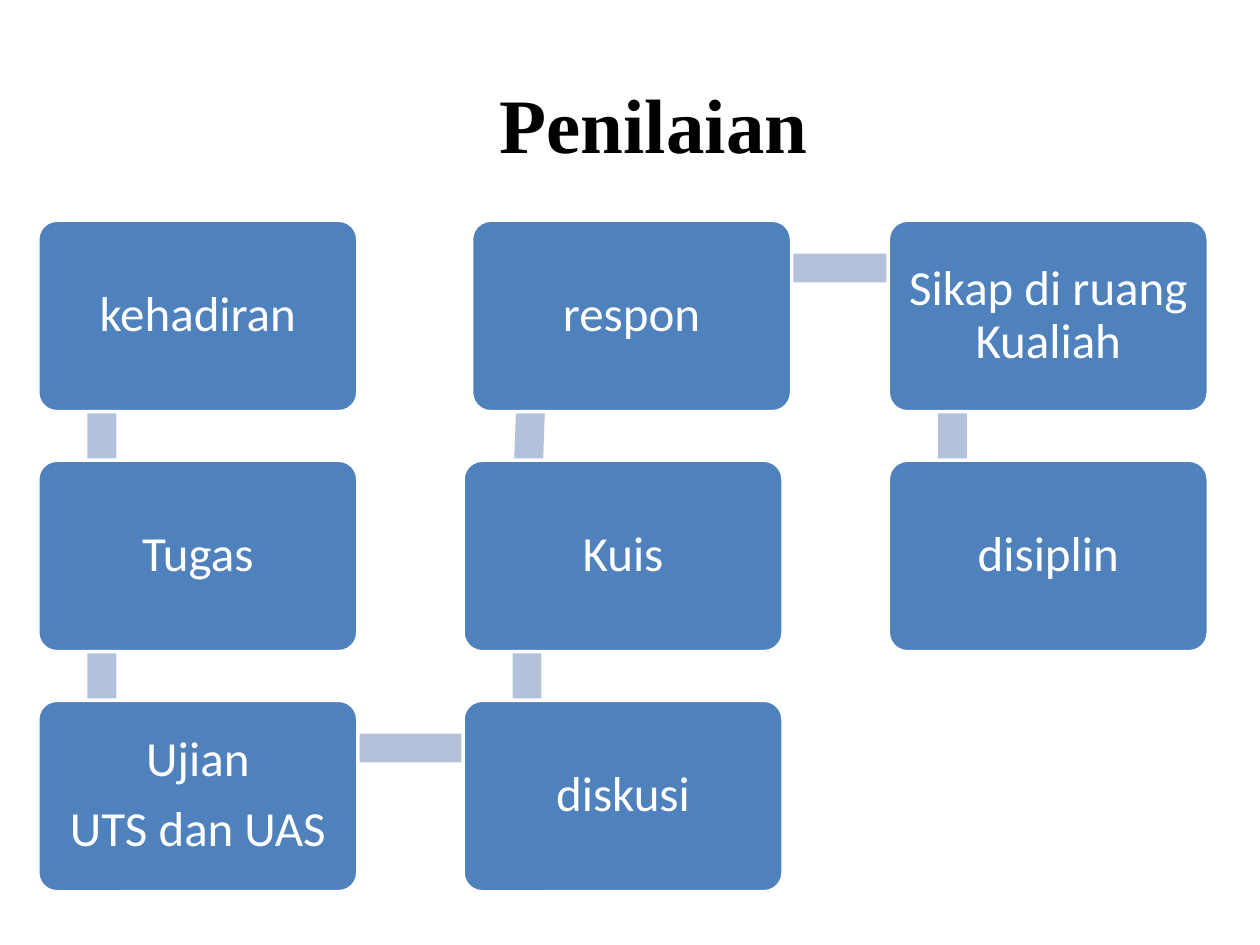
import math
import pptx
import pptx.util
import pptx.dml.color
import pptx.enum.shapes
import pptx.enum.text

WIDTH, HEIGHT = 10, 7.5
COLUMN_STEP, ROW_STEP = 3.375, 1.905
STEP_WIDTH, STEP_HEIGHT = 2.54, 1.52
LINK_THICKNESS = 0.23
STEPS = [
    (0, 0, ["kehadiran"]),
    (0, 1, ["Tugas"]),
    (0, 2, ["Ujian", "UTS dan UAS"]),
    (1, 2, ["diskusi"]),
    (1, 1, ["Kuis"]),
    (1.02, 0, ["respon"]),
    (2, 0, ["Sikap di ruang Kualiah"]),
    (2, 1, ["disiplin"]),
]


def color(value):
    return pptx.dml.color.RGBColor.from_string(value)


def inches(*lengths):
    return [pptx.util.Inches(length) for length in lengths]


def write(frame, lines, *, size, font, fill, bold=False, inset=0.1,
          line_spacing=1.0, space_after=0):
    frame.word_wrap = True
    frame.auto_size = pptx.enum.text.MSO_AUTO_SIZE.NONE
    frame.vertical_anchor = pptx.enum.text.MSO_ANCHOR.MIDDLE
    frame.margin_left = frame.margin_right = pptx.util.Inches(inset)
    frame.margin_top = frame.margin_bottom = pptx.util.Inches(inset)
    for index, line in enumerate(lines):
        paragraph = frame.add_paragraph() if index else frame.paragraphs[0]
        paragraph.alignment = pptx.enum.text.PP_ALIGN.CENTER
        paragraph.line_spacing = line_spacing
        paragraph.space_after = pptx.util.Pt(space_after)
        run = paragraph.add_run()
        run.text = line
        run.font.size = pptx.util.Pt(size)
        run.font.name = font
        run.font.bold = bold
        run.font.color.rgb = color(fill)


def add_block(flow, kind, box, fill):
    block = flow.shapes.add_shape(kind, *inches(*box))
    block.shadow.inherit = False
    block.fill.solid()
    block.fill.fore_color.rgb = color(fill)
    block.line.fill.background()
    return block


def add_link(flow, start, end):
    length = math.dist(start, end)
    middle_x, middle_y = [(a + b) / 2 for a, b in zip(start, end)]
    box = (middle_x - length / 2, middle_y - LINK_THICKNESS / 2, length, LINK_THICKNESS)
    link = add_block(flow, pptx.enum.shapes.MSO_SHAPE.RECTANGLE, box, "B3C1DB")
    link.rotation = math.degrees(math.atan2(end[1] - start[1], end[0] - start[0])) % 360


def add_step(flow, left, top, lines):
    box = (left, top, STEP_WIDTH, STEP_HEIGHT)
    step = add_block(flow, pptx.enum.shapes.MSO_SHAPE.ROUNDED_RECTANGLE, box, "4F81BD")
    step.adjustments[0] = 0.1
    step.line.color.rgb = color("FFFFFF")
    step.line.width = pptx.util.Pt(2)
    write(step.text_frame, lines, size=28, font="Calibri", fill="FFFFFF",
          inset=0.12, line_spacing=0.9, space_after=9.8)


def add_title(slide, left, top, width, height):
    title = slide.shapes.title
    title.left, title.top, title.width, title.height = inches(left, top, width, height)
    write(title.text_frame, ["Penilaian"], size=44, font="Times New Roman",
          fill="000000", bold=True)


def add_flow(slide, left, top):
    flow = slide.shapes.add_group_shape()
    corners = [(left + column * COLUMN_STEP, top + row * ROW_STEP)
               for column, row, _ in STEPS]
    joints = [(x + STEP_WIDTH / 5, y + STEP_HEIGHT / 4) for x, y in corners]
    for start, end in zip(joints, joints[1:]):
        add_link(flow, start, end)
    for (x, y), (_, _, lines) in zip(corners, STEPS):
        add_step(flow, x, y, lines)


def main():
    deck = pptx.Presentation()
    deck.slide_width, deck.slide_height = inches(WIDTH, HEIGHT)
    slide = deck.slides.add_slide(deck.slide_layouts[5])
    slide.background.fill.solid()
    slide.background.fill.fore_color.rgb = color("FFFFFF")
    add_title(slide, 0.092 * WIDTH, 0.056 * HEIGHT, 0.854 * WIDTH, 0.148 * HEIGHT)
    add_flow(slide, 0.03 * WIDTH, 0.233 * HEIGHT)
    deck.save("out.pptx")


if __name__ == "__main__":
    main()
